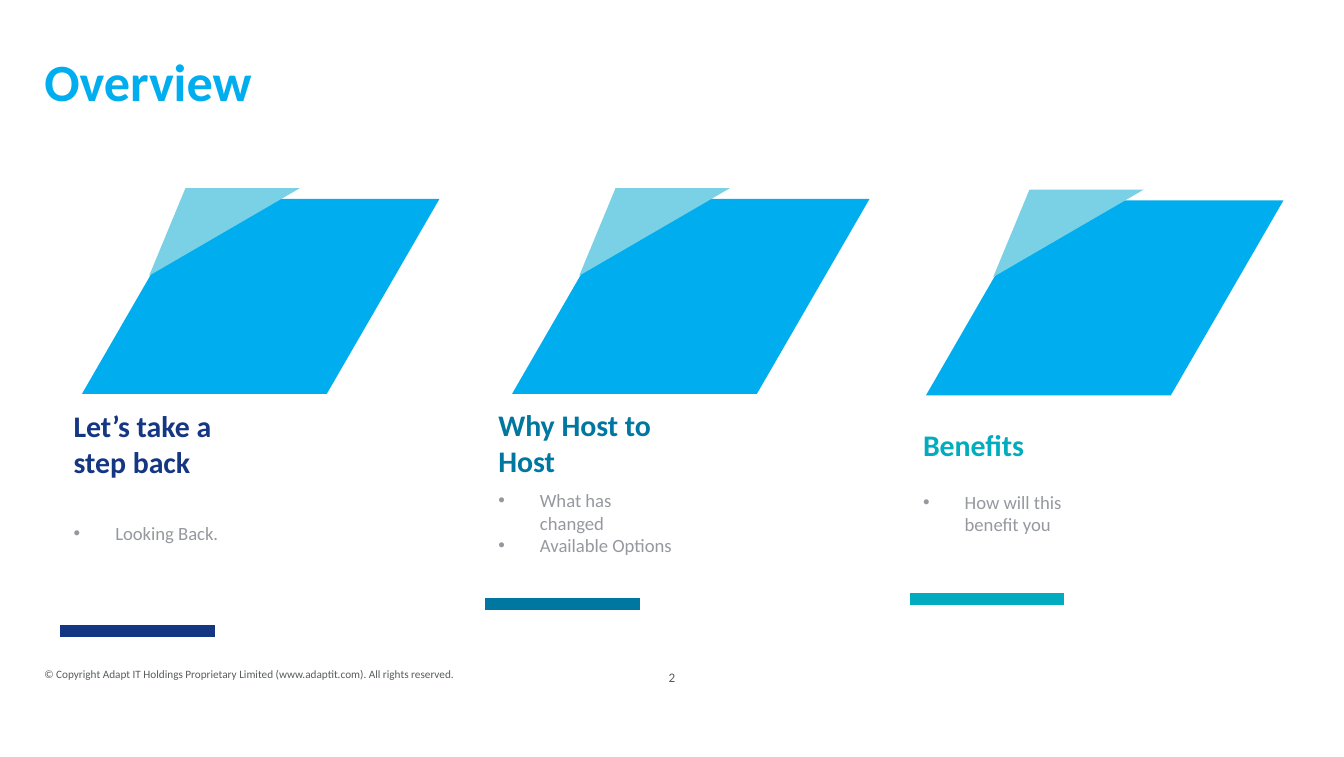
from dataclasses import dataclass

import pptx
import pptx.dml.color
import pptx.enum.shapes
import pptx.enum.text
import pptx.oxml.ns
import pptx.util
from lxml import etree

Inches = pptx.util.Inches
Anchor = pptx.enum.text.MSO_ANCHOR
Align = pptx.enum.text.PP_ALIGN
Shape = pptx.enum.shapes.MSO_SHAPE

COLORS = {
    "sky": "00AEEF",
    "pale": "7AD0E4",
    "navy": "153683",
    "blue": "0077A0",
    "teal": "00ACBD",
    "gray": "95999F",
    "footer": "585C5E",
}
FONT = "Calibri"
BULLET_INDENT = Inches(0.31)
BULLET_SIZE = 10


@dataclass
class Topic:
    """One column; lengths are in inches."""
    heading: str
    points: list[str]
    color: str
    left: float
    heading_top: float
    heading_height: float
    points_top: float
    points_height: float
    bar_top: float
    emblem_left: float
    emblem_top: float


TOPICS = [
    Topic("Let’s take a step back", ["Looking Back."], "navy",
          0.45, 2.98, 0.64, 3.83, 0.27, 4.65, 0.61, 1.48),
    Topic("Why Host to Host", ["What has changed", "Available Options"], "blue",
          3.61, 2.97, 0.64, 3.59, 1, 4.45, 3.81, 1.48),
    Topic("Benefits", ["How will this benefit you"], "teal",
          6.77, 3.12, 0.37, 3.6, 0.44, 4.41, 6.89, 1.49),
]


def rgb(name: str) -> pptx.dml.color.RGBColor:
    return pptx.dml.color.RGBColor.from_string(COLORS[name])


def paint(shape, color: str) -> None:
    shape.shadow.inherit = False
    shape.fill.solid()
    shape.fill.fore_color.rgb = rgb(color)
    shape.line.fill.background()


def add_bullet(para) -> None:
    properties = para._p.get_or_add_pPr()
    properties.set("marL", str(BULLET_INDENT))
    properties.set("indent", str(-BULLET_INDENT))
    font = etree.SubElement(properties, pptx.oxml.ns.qn("a:buFont"))
    font.set("typeface", "Arial")
    bullet = etree.SubElement(properties, pptx.oxml.ns.qn("a:buChar"))
    bullet.set("char", "•")


def add_text(page, lines: list[str], left: float, top: float, width: float,
             height: float, *, size: float, color: str, bold: bool = False,
             bullets: bool = False, anchor=Anchor.MIDDLE, align=Align.LEFT,
             inset: bool = True, line_spacing=None) -> None:
    box = page.shapes.add_textbox(Inches(left), Inches(top), Inches(width), Inches(height))
    frame = box.text_frame
    frame.word_wrap = True
    frame.vertical_anchor = anchor
    if not inset:
        frame.margin_left = frame.margin_right = 0
        frame.margin_top = frame.margin_bottom = 0
    for index, line in enumerate(lines):
        para = frame.paragraphs[0] if index == 0 else frame.add_paragraph()
        para.alignment = align
        if line_spacing is not None:
            para.line_spacing = line_spacing
        if bullets:
            add_bullet(para)
        span = para.add_run()
        span.text = line
        span.font.name = FONT
        span.font.size = pptx.util.Pt(size)
        span.font.bold = bold
        span.font.color.rgb = rgb(color)


def add_emblem(page, left: float, top: float) -> None:
    """Draw a parallelogram with a pale triangle folded over its top-left edge."""
    slab = page.shapes.add_shape(Shape.PARALLELOGRAM, Inches(left), Inches(top),
                                 Inches(2.66), Inches(1.45))
    slab.adjustments[0] = 0.578
    paint(slab, "sky")
    corners = [(Inches(left + dx), Inches(top + dy))
               for dx, dy in [(0.77, -0.08), (0.5, 0.57), (1.62, -0.08)]]
    builder = page.shapes.build_freeform(*corners[0])
    builder.add_line_segments(corners[1:], close=True)
    paint(builder.convert_to_shape(), "pale")


def add_topic(page, topic: Topic) -> None:
    add_text(page, topic.points, topic.left, topic.points_top, 1.54, topic.points_height,
             size=BULLET_SIZE, color="gray", bullets=True, anchor=Anchor.TOP)
    add_text(page, [topic.heading], topic.left, topic.heading_top, 1.53,
             topic.heading_height, size=16, color=topic.color, bold=True)
    bar = page.shapes.add_shape(Shape.FLOWCHART_PROCESS, Inches(topic.left),
                                Inches(topic.bar_top), Inches(1.15), Inches(0.09))
    paint(bar, topic.color)
    add_emblem(page, topic.emblem_left, topic.emblem_top)


def main() -> None:
    deck = pptx.Presentation()
    deck.slide_width, deck.slide_height = Inches(10), Inches(5.63)
    page = deck.slides.add_slide(deck.slide_layouts[6])
    add_text(page, ["© Copyright Adapt IT Holdings Proprietary Limited "
                    "(www.adaptit.com). All rights reserved."],
             0.33, 4.78, 3.45, 0.46, size=6, color="footer", inset=False)
    add_text(page, ["2"], 4.31, 4.78, 1.38, 0.52, size=7, color="footer",
             align=Align.CENTER, inset=False)
    add_text(page, ["Overview"], 0.33, 0.41, 9.33, 0.53, size=28, color="sky",
             bold=True, inset=False, line_spacing=pptx.util.Pt(22.6))
    for topic in TOPICS:
        add_topic(page, topic)
    deck.save("out.pptx")


if __name__ == "__main__":
    main()
